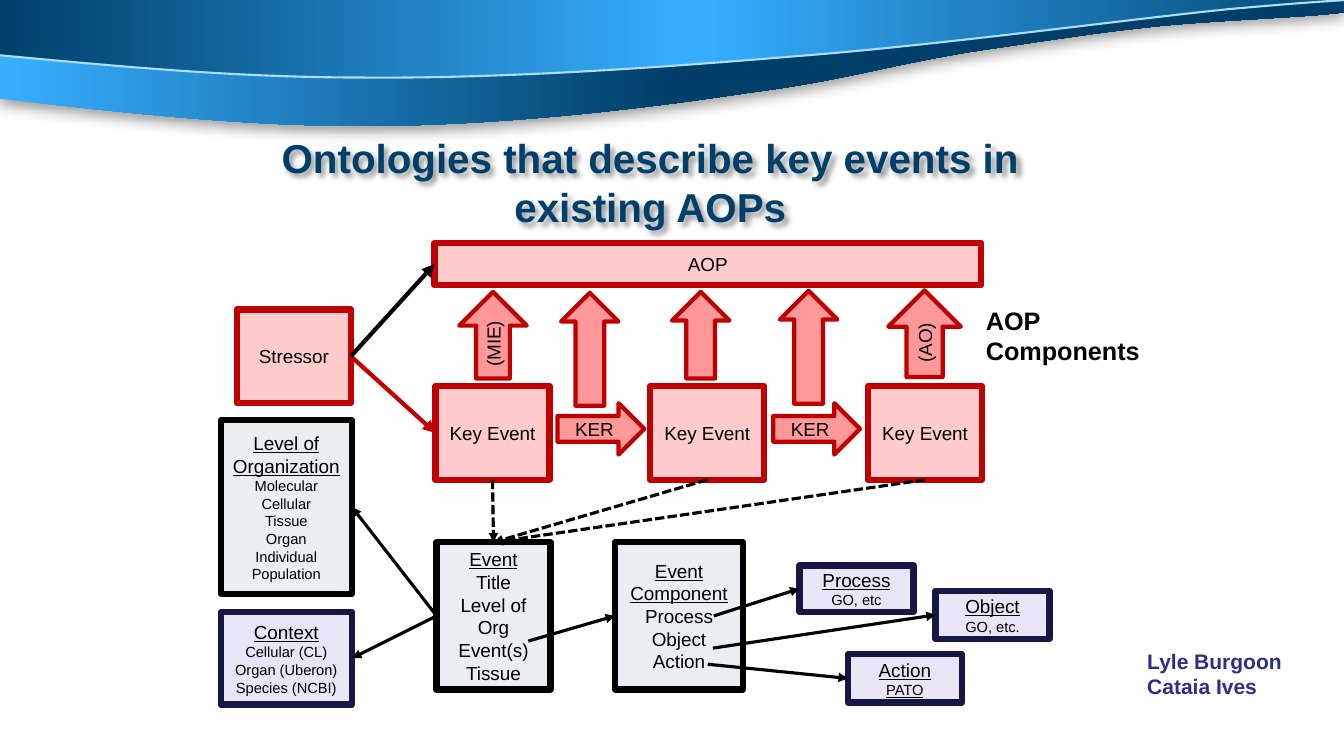
from dataclasses import dataclass
from lxml.etree import SubElement as Sub
from pptx import Presentation
from pptx.dml.color import RGBColor as RGB
from pptx.enum.dml import MSO_LINE as Dash
from pptx.enum.shapes import MSO_CONNECTOR as Link, MSO_SHAPE as Kind
from pptx.enum.text import MSO_ANCHOR as Anchor, MSO_AUTO_SIZE as Auto, PP_ALIGN as Align
from pptx.oxml.ns import qn
from pptx.util import Inches, Pt


@dataclass(frozen=True)
class Theme:
    font: str = "Arial"
    black: str = "000000"
    navy: str = "003F69"
    sky: str = "37AEFF"
    pale: str = "ABDDFF"
    red: str = "C00000"
    pink: str = "FF9999"
    gray: str = "D6DCE5"
    lilac: str = "CECEEF"
    ink: str = "171745"
    violet: str = "2D2D8A"
    head: float = 28.8
    label: float = 18
    credit: float = 15
    body: float = 13.5
    small: float = 10.5


TOP, LEFT, BOTTOM, RIGHT = range(4)


def write(frame, lines, font, size, color, rest=None, bold=False, marks=0, align=Align.CENTER):
    for i, line in enumerate(lines):
        para = frame.paragraphs[0] if i == 0 else frame.add_paragraph()
        para.alignment = align
        run = para.add_run()
        run.text = line
        run.font.name = font
        run.font.size = Pt(rest if rest and i else size)
        run.font.bold = bold
        run.font.underline = i < marks
        run.font.color.rgb = RGB.from_string(color)


def shade(shape, blur, dist, angle, alpha):
    shape.shadow.inherit = False
    effects = shape._element.spPr.find(qn("a:effectLst"))
    cast = Sub(effects, qn("a:outerShdw"), blurRad=str(Pt(blur)), dist=str(Pt(dist)),
               dir=str(angle * 60000), algn="t", rotWithShape="0")
    tone = Sub(cast, qn("a:srgbClr"), val="000000")
    Sub(tone, qn("a:alpha"), val=str(alpha * 1000))


def bend(shape, count):
    lines = list(shape._element.spPr.iter(qn("a:lnTo")))[:3 * count]
    for i in range(0, len(lines), 3):
        first, *rest = lines[i:i + 3]
        first.tag = qn("a:cubicBezTo")
        for line in rest:
            first.append(line[0])
            line.getparent().remove(line)


class Board:
    def __init__(self, slide, theme):
        self.slide, self.shapes, self.theme = slide, slide.shapes, theme

    def style(self, shape, fill, line, width, alpha=100):
        shape.shadow.inherit = False
        shape.fill.solid()
        shape.fill.fore_color.rgb = RGB.from_string(fill)
        if alpha < 100:
            tone = shape._element.spPr.find(qn("a:solidFill"))[0]
            Sub(tone, qn("a:alpha"), val=str(alpha * 1000))
        shape.line.color.rgb = RGB.from_string(line)
        shape.line.width = Pt(width)

    def band(self, start, curves, ends, stops, line=None):
        points = [start, *(point for arc in curves for point in arc), *ends]
        spots = [(Inches(x), Inches(y)) for x, y in points]
        pen = self.shapes.build_freeform(*spots[0])
        pen.add_line_segments(spots[1:], close=True)
        shape = pen.convert_to_shape()
        bend(shape, len(curves))
        shape.fill.gradient()
        shape.fill.gradient_angle = 0
        ramp = shape._element.spPr.find(qn("a:gradFill")).find(qn("a:gsLst"))
        for old in list(ramp):
            ramp.remove(old)
        for at, color in zip((0, 50, 100), stops):
            Sub(Sub(ramp, qn("a:gs"), pos=str(at * 1000)), qn("a:srgbClr"), val=color)
        if line:
            shape.shadow.inherit = False
            shape.line.color.rgb = RGB.from_string(line)
            shape.line.width = Pt(1.5)
        else:
            shape.line.fill.background()
            shade(shape, 10, 3, 90, 40)

    def title(self, text, x, y, w, h):
        t, shape = self.theme, self.shapes.title
        shape.left, shape.top, shape.width, shape.height = map(Inches, (x, y, w, h))
        shape.fill.background()
        frame = shape.text_frame
        frame.auto_size = Auto.NONE
        frame.vertical_anchor = Anchor.MIDDLE
        write(frame, [text], t.font, t.head, t.navy, bold=True)
        shade(shape, 4, 3, 45, 40)
        self.shapes._spTree.append(shape._element)

    def box(self, x, y, w, h, lines, fill, line, rest=None, marks=0):
        t = self.theme
        shape = self.shapes.add_shape(Kind.RECTANGLE, *map(Inches, (x, y, w, h)))
        self.style(shape, fill, line, 4.5, 50)
        shape.text_frame.vertical_anchor = Anchor.MIDDLE
        write(shape.text_frame, lines, t.font, t.body, t.black, rest, marks=marks)
        return shape

    def arrow(self, x, y, w, h, text="", turn=0):
        t = self.theme
        shape = self.shapes.add_shape(Kind.RIGHT_ARROW, *map(Inches, (x, y, w, h)))
        shape.rotation = turn
        self.style(shape, t.pink, t.red, 3)
        if text:
            shape.text_frame.vertical_anchor = Anchor.MIDDLE
            write(shape.text_frame, [text], t.font, t.body, t.black)

    def link(self, start, end, color, width=2.25, dash=None):
        spot = (0, 0) if hasattr(start[0], "shape_id") else tuple(map(Inches, start))
        wire = self.shapes.add_connector(Link.STRAIGHT, *spot, *spot)
        if spot == (0, 0):
            wire.begin_connect(*start)
        wire.end_connect(*end)
        wire.line.color.rgb = RGB.from_string(color)
        wire.line.width = Pt(width)
        if dash:
            wire.line.dash_style = dash
        props = wire._element.spPr
        Sub(props.find(qn("a:ln")), qn("a:tailEnd"), type="triangle")
        Sub(props, qn("a:effectLst"))

    def label(self, x, y, w, h, lines, size, color):
        frame = self.shapes.add_textbox(*map(Inches, (x, y, w, h))).text_frame
        frame.word_wrap = False
        frame.auto_size = Auto.SHAPE_TO_FIT_TEXT
        write(frame, lines, self.theme.font, size, color, bold=True, align=Align.LEFT)


def main():
    deck = Presentation()
    deck.slide_width, deck.slide_height = Inches(13.33), Inches(7.5)
    t = Theme()
    board = Board(deck.slides.add_slide(deck.slide_layouts[5]), t)

    board.band((0, 0.98), [
        ((1.25, 1.12), (2.45, 1.26), (3.73, 1.25)),
        ((4.97, 1.24), (6.32, 1.09), (7.43, 0.92)),
        ((8.45, 0.79), (8.88, 0.62), (9.86, 0.48)),
        ((10.54, 0.38), (10.91, 0.32), (11.49, 0.26)),
        ((12.07, 0.2), (13.04, 0.17), (13.34, 0.12))],
        [(13.33, 0), (0, 0.01)], (t.sky, t.navy, t.navy))
    board.band((-0.1, 0.54), [
        ((1.09, 0.65), (2.28, 0.77), (3.61, 0.77)),
        ((4.94, 0.78), (6.44, 0.68), (7.87, 0.56)),
        ((9.31, 0.45), (11.2, 0.19), (12.2, 0.09)),
        ((13.21, 0), (13.64, -0.02), (13.89, -0.01))],
        [(-0.11, -0.01)], (t.navy, t.sky, t.navy), t.pale)
    board.title("Ontologies that describe key events in existing AOPs", 2.07, 1.4, 8.76, 0.81)

    rose, slate, iris = (t.pink, t.red), (t.gray, t.black), (t.lilac, t.ink)
    cause = board.box(2.35, 3.07, 1.13, 0.93, ["Stressor"], *rose)
    event = board.box(4.33, 5.38, 1.13, 1.46,
                      ["Event", "Title", "Level of Org", "Event(s)", "Tissue"], *slate, marks=1)
    keys = [board.box(x, 3.83, 1.13, 0.93, ["Key Event"], *rose) for x in (4.32, 6.45, 8.61)]
    aop = board.box(4.31, 2.41, 5.42, 0.42, ["AOP"], *rose)
    for x in (5.53, 7.67):
        board.arrow(x, 4, 0.86, 0.51, "KER")
    for x, y, w, h, text in (
            (4.46, 2.99, 0.86, 0.67, "(MIE)"), (6.52, 3.04, 0.86, 0.57, ""),
            (8.74, 2.95, 0.86, 0.72, "(AO)"), (7.46, 3.16, 1.12, 0.57, ""),
            (5.29, 3.18, 1.12, 0.57, "")):
        board.arrow(x, y, w, h, text, 270)

    level = board.box(2.19, 4.17, 1.3, 1.72,
                      ["Level of Organization", "Molecular", "Cellular", "Tissue", "Organ",
                       "Individual", "Population"], *slate, t.small, 1)
    part = board.box(6.1, 5.38, 1.27, 1.46,
                     ["Event Component", "Process", "Object", "Action"], *slate, marks=1)
    scope = board.box(2.19, 6.07, 1.3, 0.92,
                      ["Context", "Cellular (CL)", "Organ (Uberon)", "Species (NCBI)"],
                      *iris, t.small, 1)
    terms = [board.box(x, y, 1.13, h, lines, *iris, t.small, marks)
             for x, y, h, lines, marks in (
                 (7.93, 5.61, 0.46, ["Process", "GO, etc"], 1),
                 (9.28, 5.86, 0.48, ["Object", "GO, etc."], 1),
                 (8.41, 6.49, 0.48, ["Action", "PATO"], 2))]

    board.link((cause, RIGHT), (keys[0], LEFT), t.red, 3)
    board.link((cause, RIGHT), (aop, LEFT), t.black, 3)
    for goal in (scope, level):
        board.link((event, LEFT), (goal, RIGHT), t.black)
    board.link((5.24, 6.36), (part, LEFT), t.black)
    for start, term in zip(((7.08, 6.11), (7.07, 6.43), (7.02, 6.59)), terms):
        board.link(start, (term, LEFT), t.black)
    for key in keys:
        board.link((key, BOTTOM), (event, TOP), t.black, dash=Dash.SQUARE_DOT)

    board.label(9.68, 2.98, 1.74, 0.71, ["AOP", "Components"], t.label, t.black)
    board.label(11.28, 6.38, 1.55, 0.61, ["Lyle Burgoon", "Cataia Ives"], t.credit, t.violet)
    deck.save("out.pptx")


if __name__ == "__main__":
    main()
